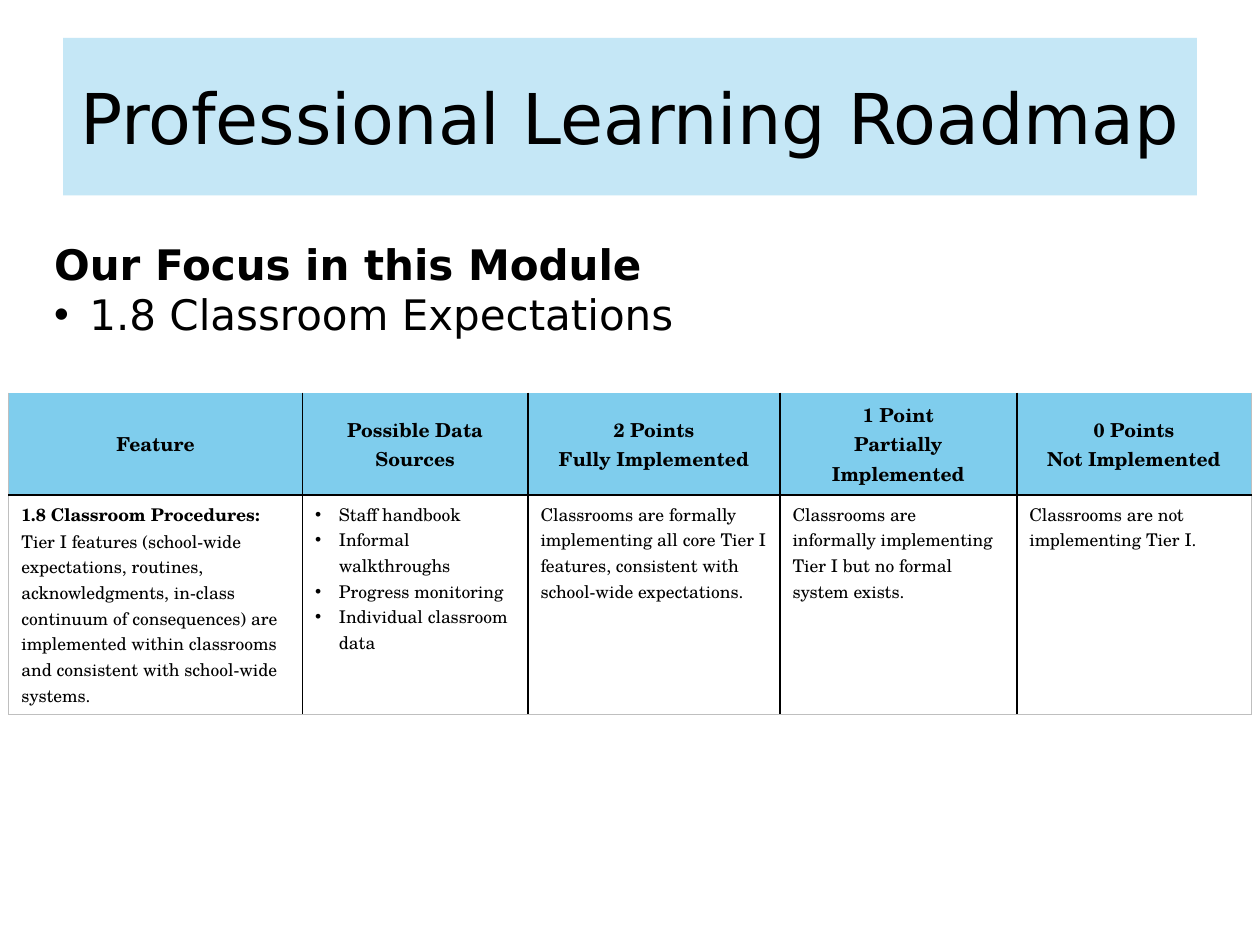
from dataclasses import dataclass

from lxml import etree
from pptx import Presentation
from pptx import util as u
from pptx.dml import color
from pptx.enum import text
from pptx.oxml import ns

HEADING_FONT = "DejaVu Sans"
TABLE_FONT = "TeX Gyre Schola"
BLACK, HEADER_BLUE, TITLE_BLUE, GRID_GRAY = "000000", "7FCDED", "A9DCF2", "BFBFBF"
COLUMN_WIDTHS = (2.33, 1.79, 2, 1.88, 1.86)
ROW_HEIGHTS = (0.81, 1.74)


@dataclass
class Span:
    text: str
    bold: bool = False


@dataclass
class Line:
    spans: list[Span]
    indent: float = 0  # a bullet hangs in this indent, in inches


@dataclass
class Style:
    font: str
    size: float
    align: text.PP_ALIGN = text.PP_ALIGN.LEFT


def plain(words: str, indent: float = 0) -> Line:
    return Line([Span(words)], indent)


def bold(words: str) -> Line:
    return Line([Span(words, True)])


def rgb(value: str) -> color.RGBColor:
    return color.RGBColor.from_string(value)


def add_child(parent, tag: str, **attributes: str):
    return etree.SubElement(parent, ns.qn(tag), attributes)


def set_bullet(para, indent: float) -> None:
    """Hang a bullet in the indent, or switch bullets off when it is zero."""
    properties = para._p.get_or_add_pPr()
    properties.set("marL", str(u.Inches(indent)))
    properties.set("indent", str(-u.Inches(indent)))
    if indent:
        add_child(add_child(properties, "a:buClr"), "a:srgbClr", val=BLACK)
        add_child(properties, "a:buFont", typeface="Arial")
        add_child(properties, "a:buChar", char="•")
    else:
        add_child(properties, "a:buNone")


def write(frame, lines: list[Line], style: Style) -> None:
    frame.word_wrap = True
    for number, line in enumerate(lines):
        para = frame.add_paragraph() if number else frame.paragraphs[0]
        para.alignment = style.align
        para.space_before = u.Pt(0)
        set_bullet(para, line.indent)
        for span in line.spans:
            run = para.add_run()
            run.text = span.text
            run.font.name = style.font
            run.font.size = u.Pt(style.size)
            run.font.bold = span.bold
            run.font.color.rgb = rgb(BLACK)


def place(shape, left: float, top: float, width: float, height: float) -> None:
    shape.left, shape.top = u.Inches(left), u.Inches(top)
    shape.width, shape.height = u.Inches(width), u.Inches(height)


def set_border(cell, side: str, value: str, points: float) -> None:
    edge = add_child(cell._tc.get_or_add_tcPr(), f"a:{side}", w=str(u.Pt(points)))
    add_child(add_child(edge, "a:solidFill"), "a:srgbClr", val=value)


def style_cell(cell, row: int, column: int) -> None:
    """Black rules between cells, a fine gray frame around them."""
    inner = {
        "lnL": column > 0,
        "lnR": column < len(COLUMN_WIDTHS) - 1,
        "lnT": row > 0,
        "lnB": row < len(ROW_HEIGHTS) - 1,
    }
    for side, is_inner in inner.items():
        outer_color = HEADER_BLUE if side == "lnT" else GRID_GRAY
        set_border(cell, side, BLACK if is_inner else outer_color, 1 if is_inner else 0.5)
    if row == 0:
        cell.fill.solid()
        cell.fill.fore_color.rgb = rgb(HEADER_BLUE)
        cell.vertical_anchor = text.MSO_ANCHOR.MIDDLE
    else:
        cell.fill.background()


def add_title(slide) -> None:
    title = slide.shapes.title
    place(title, 0.5, 0.3, 9, 1.25)
    title.fill.solid()
    title.fill.fore_color.rgb = rgb(TITLE_BLUE)
    shade = title._element.spPr.find(".//" + ns.qn("a:srgbClr"))
    add_child(shade, "a:alpha", val="67000")
    frame = title.text_frame
    frame.auto_size = text.MSO_AUTO_SIZE.NONE
    frame.vertical_anchor = text.MSO_ANCHOR.MIDDLE
    write(frame, [plain("Professional Learning Roadmap")],
          Style(HEADING_FONT, 40, text.PP_ALIGN.CENTER))


def add_focus(slide) -> None:
    body = slide.placeholders[1]
    place(body, 0.33, 1.79, 7.7, 1.25)
    frame = body.text_frame
    frame.auto_size = text.MSO_AUTO_SIZE.NONE
    frame.margin_top = frame.margin_bottom = u.Inches(0.1)
    write(frame, [bold("Our Focus in this Module"),
                  plain("1.8 Classroom Expectations", 0.28)],
          Style(HEADING_FONT, 24))


def add_rubric(slide) -> None:
    header = [
        [bold("Feature")],
        [bold("Possible Data Sources")],
        [bold("2 Points"), bold("Fully Implemented")],
        [bold("1 Point"), bold("Partially Implemented")],
        [bold("0 Points"), bold("Not Implemented")],
    ]
    sources = ("Staff handbook", "Informal walkthroughs",
               "Progress monitoring", "Individual classroom data")
    details = [
        [Line([Span("1.8 Classroom Procedures: ", True),
               Span("Tier I features (school-wide expectations, routines, "
                    "acknowledgments, in-class continuum of consequences) are "
                    "implemented within classrooms and consistent with "
                    "school-wide systems.")])],
        [plain(source, 0.19) for source in sources],
        [plain("Classrooms are formally implementing all core Tier I features, "
               "consistent with school-wide expectations.")],
        [plain("Classrooms are informally implementing Tier I but no formal "
               "system exists.")],
        [plain("Classrooms are not implementing Tier I.")],
    ]
    styles = (Style(TABLE_FONT, 11, text.PP_ALIGN.CENTER), Style(TABLE_FONT, 10))
    table = slide.shapes.add_table(
        len(ROW_HEIGHTS), len(COLUMN_WIDTHS), u.Inches(0.07), u.Inches(3.12),
        u.Inches(sum(COLUMN_WIDTHS)), u.Inches(sum(ROW_HEIGHTS))).table
    table.horz_banding = False
    for column, width in zip(table.columns, COLUMN_WIDTHS):
        column.width = u.Inches(width)
    for row, height in zip(table.rows, ROW_HEIGHTS):
        row.height = u.Inches(height)
    for row, (contents, style) in enumerate(zip((header, details), styles)):
        for column, lines in enumerate(contents):
            cell = table.cell(row, column)
            style_cell(cell, row, column)
            write(cell.text_frame, lines, style)


def main() -> None:
    deck = Presentation()
    deck.slide_width, deck.slide_height = u.Inches(10), u.Inches(7.5)
    slide = deck.slides.add_slide(deck.slide_layouts[1])
    add_title(slide)
    add_focus(slide)
    add_rubric(slide)
    deck.save("out.pptx")


if __name__ == "__main__":
    main()
